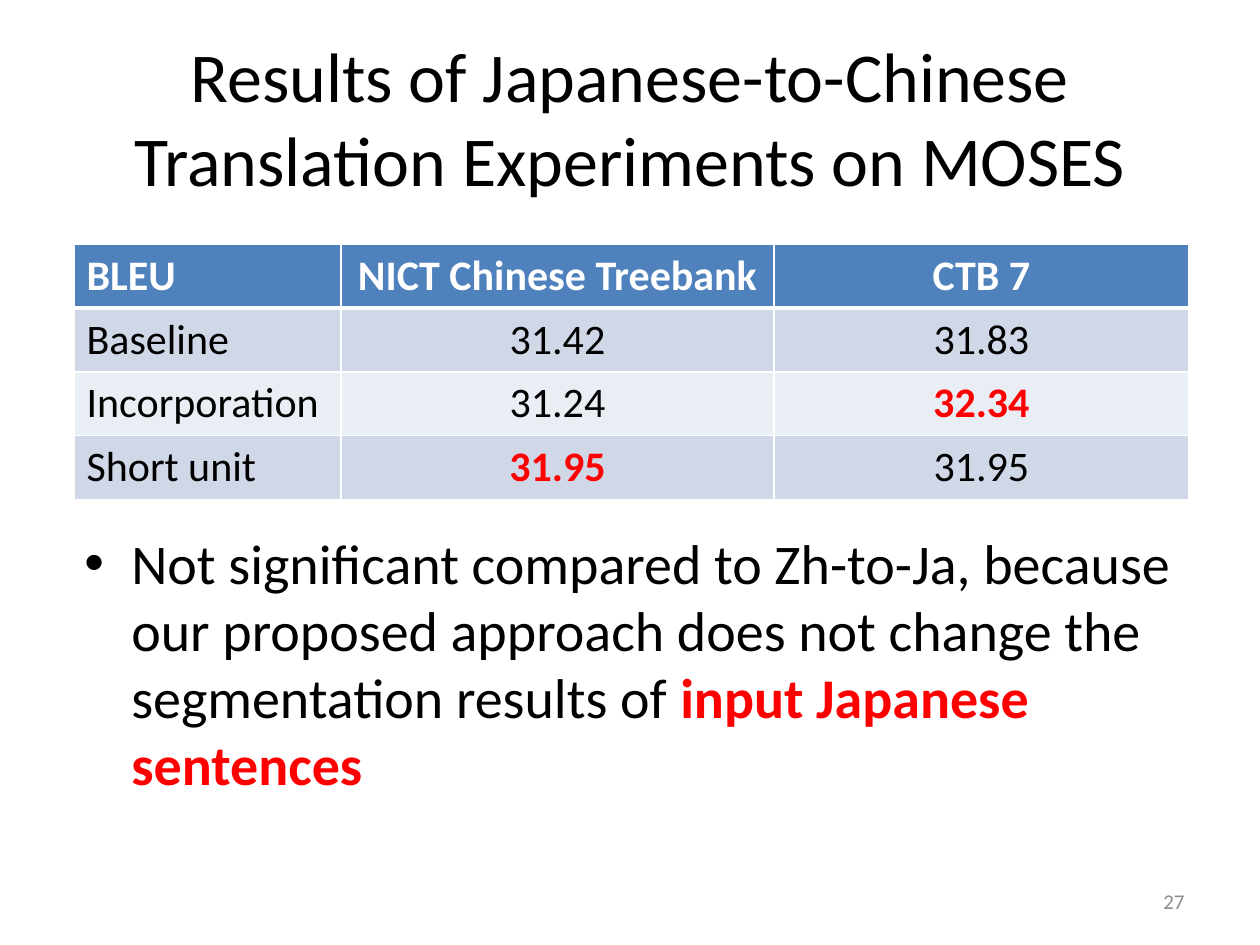
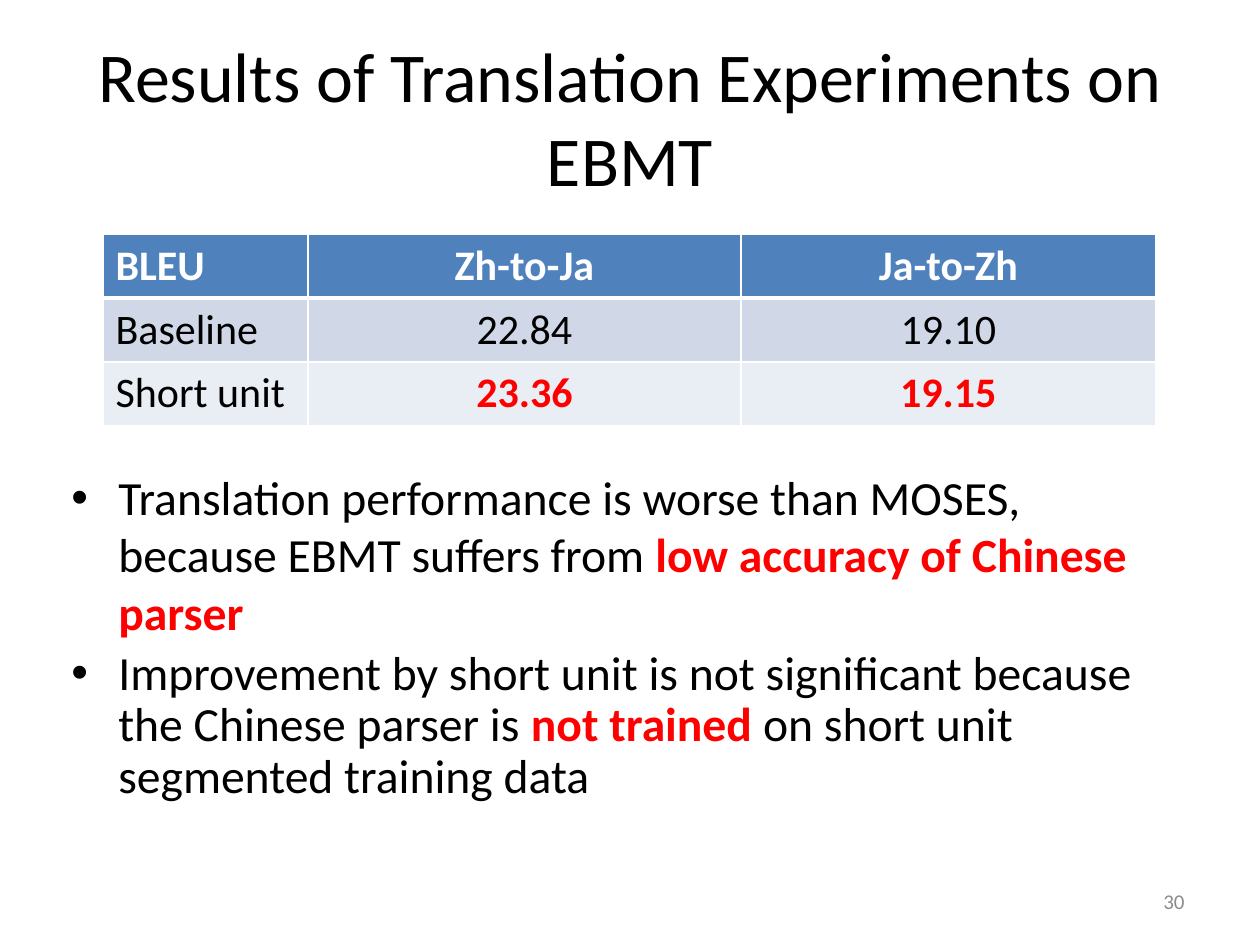
"""Build two slides of BLEU results, each with a table and bullet remarks."""
from lxml import etree
from pptx import Presentation
from pptx.dml.color import RGBColor
from pptx.enum.text import MSO_ANCHOR, MSO_AUTO_SIZE, PP_ALIGN
from pptx.oxml.ns import qn
from pptx.util import Pt

LEFT, CENTER, RIGHT = PP_ALIGN.LEFT, PP_ALIGN.CENTER, PP_ALIGN.RIGHT
TOP, MIDDLE = MSO_ANCHOR.TOP, MSO_ANCHOR.MIDDLE
NO_FIT = MSO_AUTO_SIZE.NONE

EMU_PER_PX = 914400 / 126
FONT = "Calibri"
COLORS = {"text": "000000", "strong": "FF0000", "number": "8C8C8C", "white": "FFFFFF",
          "header": "4F81BD", "odd": "D0D8E8", "even": "E9EDF4"}
TITLE_BOX = (63, 38, 1134, 157)
NUMBER_BOX = (903, 876, 294, 50)
REMARK_SIZE = (1134, 282)
VALUE_COLS = [433, 415]
ROW_HEIGHT = 63
INDENT = 47


def px(n):
    """Turn pixels into EMU."""
    return round(n * EMU_PER_PX)


def rgb(name):
    """Look up a colour by name."""
    return RGBColor.from_string(COLORS[name])


def set_attrs(obj, values):
    """Set each attribute of obj from a dict."""
    for name, value in values.items():
        setattr(obj, name, value)


def add_run(p, text, size, color="text", bold=False):
    """Append one formatted run to a paragraph."""
    r = p.add_run()
    r.text = text
    set_attrs(r.font, {"name": FONT, "size": Pt(size), "bold": bold})
    r.font.color.rgb = rgb(color)


def add_marked_runs(p, text, size):
    """Add runs, with the parts between asterisks bold and red."""
    for i, part in enumerate(text.split("*")):
        if part:
            marked = i % 2 == 1
            add_run(p, part, size, "strong" if marked else "text", marked)


def add_textbox(slide, box, anchor=TOP):
    """Add a wrapping text box and return its text frame."""
    tf = slide.shapes.add_textbox(*map(px, box)).text_frame
    set_attrs(tf, {"word_wrap": True, "auto_size": NO_FIT, "vertical_anchor": anchor})
    return tf


def add_title(slide, text):
    """Place and fill the title placeholder."""
    sp = slide.shapes.title
    set_attrs(sp, dict(zip(("left", "top", "width", "height"), map(px, TITLE_BOX))))
    tf = sp.text_frame
    set_attrs(tf, {"word_wrap": True, "auto_size": NO_FIT, "vertical_anchor": MIDDLE})
    p = tf.paragraphs[0]
    p.alignment = CENTER
    add_run(p, text, 40)


def add_number(slide, number):
    """Add the slide number at the lower right."""
    p = add_textbox(slide, NUMBER_BOX, MIDDLE).paragraphs[0]
    p.alignment = RIGHT
    add_run(p, str(number), 12, "number")


def set_borders(cell, widths):
    """Draw white cell borders, with widths in points by side."""
    tc_pr = cell._tc.get_or_add_tcPr()
    for side, width in widths.items():
        ln = etree.SubElement(tc_pr, qn(f"a:ln{side}"), w=str(Pt(width)))
        fill = etree.SubElement(ln, qn("a:solidFill"))
        etree.SubElement(fill, qn("a:srgbClr"), val=COLORS["white"])


def add_score_table(slide, left, top, label_width, rows):
    """Add a banded score table under a header row."""
    cols = [label_width] + VALUE_COLS
    box = (left, top, sum(cols), ROW_HEIGHT * len(rows))
    table = slide.shapes.add_table(len(rows), len(cols), *map(px, box)).table
    for col, width in zip(table.columns, cols):
        col.width = px(width)
    for i, row in enumerate(rows):
        band = "header" if i == 0 else "odd" if i % 2 else "even"
        for j, text in enumerate(row):
            cell = table.cell(i, j)
            set_borders(cell, {"L": 1, "R": 1, "T": 3 if i == 1 else 1, "B": 3 if i == 0 else 1})
            cell.fill.solid()
            cell.fill.fore_color.rgb = rgb(band)
            p = cell.text_frame.paragraphs[0]
            p.alignment = CENTER if j else LEFT
            if i == 0:
                add_run(p, text, 24, "white", True)
            else:
                add_marked_runs(p, text, 24)


def add_remarks(slide, left, top, size, remarks):
    """Add bulleted remarks, each a text with its line spacing."""
    tf = add_textbox(slide, (left, top, *REMARK_SIZE))
    for i, (text, spacing) in enumerate(remarks):
        p = tf.add_paragraph() if i else tf.paragraphs[0]
        set_attrs(p, {"space_before": Pt(size * 0.2), "line_spacing": spacing})
        p_pr = p._p.get_or_add_pPr()
        p_pr.set("marL", str(px(INDENT)))
        p_pr.set("indent", str(-px(INDENT)))
        etree.SubElement(p_pr, qn("a:buFont"), typeface="Arial")
        etree.SubElement(p_pr, qn("a:buChar"), char="•")
        add_marked_runs(p, text, size)


def add_result_slide(prs, title, number, table, remarks):
    """Add one result slide."""
    slide = prs.slides.add_slide(prs.slide_layouts[5])
    add_title(slide, title)
    add_number(slide, number)
    add_score_table(slide, *table)
    add_remarks(slide, *remarks)


def main():
    """Build and save the slides."""
    prs = Presentation()
    set_attrs(prs, {"slide_width": px(1260), "slide_height": px(945)})
    add_result_slide(
        prs, "Results of Japanese-to-Chinese Translation Experiments on MOSES", 27,
        (74, 244, 267, [("BLEU", "NICT Chinese Treebank", "CTB 7"),
                        ("Baseline", "31.42", "31.83"),
                        ("Incorporation", "31.24", "*32.34*"),
                        ("Short unit", "*31.95*", "31.95")]),
        (72, 522, 32, [("Not significant compared to Zh-to-Ja, because our proposed approach does "
                        "not change the segmentation results of *input Japanese sentences*", 1.0)]))
    add_result_slide(
        prs, "Results of Translation Experiments on EBMT", 30,
        (103, 234, 205, [("BLEU", "Zh-to-Ja", "Ja-to-Zh"),
                         ("Baseline", "22.84", "19.10"),
                         ("Short unit", "*23.36*", "*19.15*")]),
        (59, 462, 27.2, [("Translation performance is worse than MOSES, because EBMT suffers from "
                          "*low accuracy of Chinese parser*", 1.0),
                         ("Improvement by short unit is not significant because the Chinese parser "
                          "is *not trained* on short unit segmented training data", 0.9)]))
    prs.save("out.pptx")


if __name__ == "__main__":
    main()
